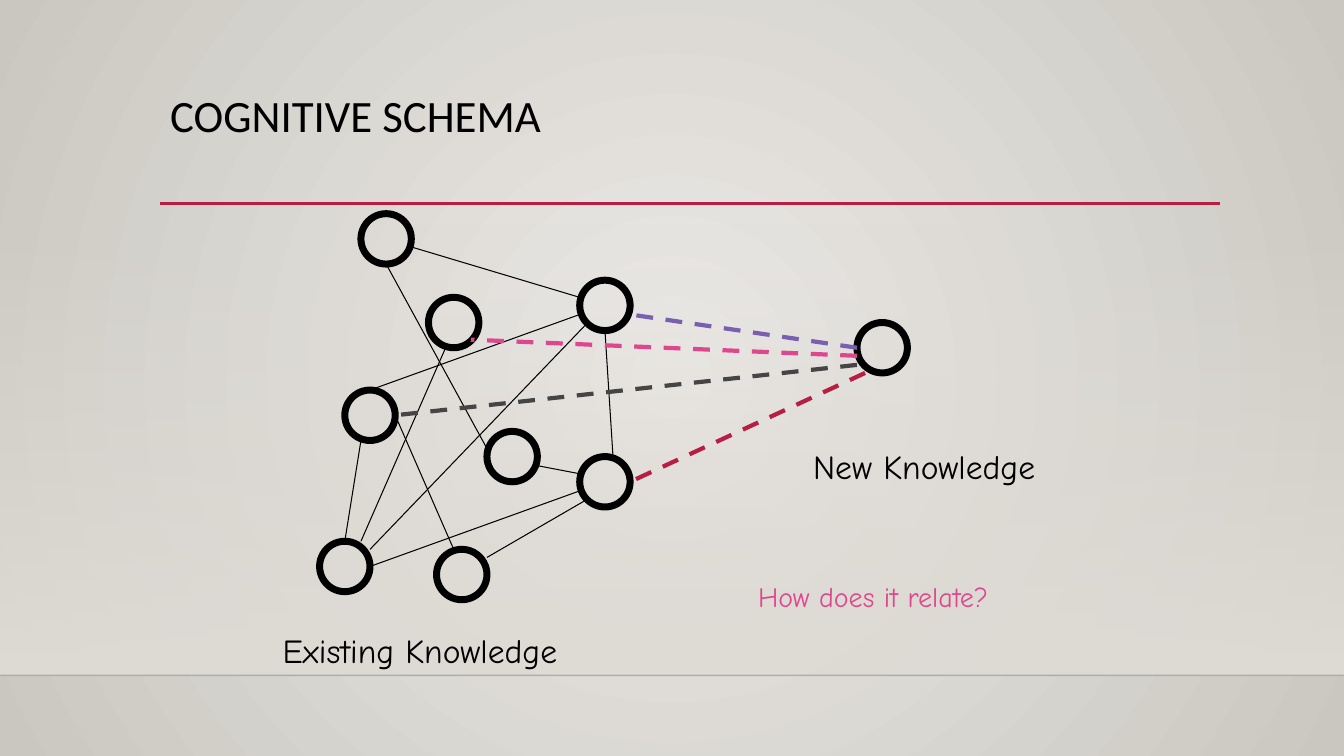
from typing import NamedTuple

from lxml import etree
from pptx import Presentation
from pptx.dml.color import RGBColor
from pptx.enum.dml import MSO_LINE
from pptx.enum.shapes import MSO_CONNECTOR, MSO_SHAPE
from pptx.enum.text import MSO_ANCHOR, PP_ALIGN
from pptx.oxml.ns import qn
from pptx.util import Inches, Pt

BLACK = RGBColor(0x00, 0x00, 0x00)
CRIMSON = RGBColor(0xB7, 0x1E, 0x42)
PINK = RGBColor(0xDE, 0x47, 0x8E)
PURPLE = RGBColor(0x79, 0x5F, 0xAF)
GREY = RGBColor(0x45, 0x45, 0x45)
FLOOR = RGBColor(0xDF, 0xDB, 0xD5)
GLOW = RGBColor(0xEC, 0xEA, 0xE7)
EDGE = RGBColor(0xCA, 0xC7, 0xC1)

LEFT, CENTER = PP_ALIGN.LEFT, PP_ALIGN.CENTER
SOLID, DASH = MSO_LINE.SOLID, MSO_LINE.DASH
STRAIGHT = MSO_CONNECTOR.STRAIGHT
TOP = MSO_ANCHOR.TOP
RECTANGLE, OVAL = MSO_SHAPE.RECTANGLE, MSO_SHAPE.OVAL

PAGE_WIDTH, PAGE_HEIGHT = 13.33, 7.5
NODE_SIZE = 0.5


class Link(NamedTuple):
    x1: float
    y1: float
    x2: float
    y2: float
    color: RGBColor = BLACK
    width: float = 0.75
    dash: MSO_LINE = SOLID


class Label(NamedTuple):
    text: str
    left: float
    top: float
    width: float
    height: float
    size: int
    font: str = "Comic Neue"
    color: RGBColor = BLACK
    align: PP_ALIGN = CENTER
    line_spacing: float = 1.0


FLOOR_LINE = Link(0, 6.7, PAGE_WIDTH, 6.7, BLACK, 1)
TITLE_RULE = Link(1.59, 2.02, 12.1, 2.02, CRIMSON, 2.5)

EXISTING_NODES = [
    (4.25, 2.95), (3.58, 2.12), (4.83, 4.28), (5.75, 2.78),
    (3.17, 5.37), (3.42, 3.87), (5.75, 4.53), (4.33, 5.45),
]
NEW_NODE = (8.5, 3.2)

EXISTING_LINKS = [
    Link(4.08, 2.45, 5.75, 2.95),
    Link(5.83, 3.2, 3.67, 5.45),
    Link(3.67, 3.87, 5.75, 3.12),
    Link(4.42, 3.45, 3.58, 5.37),
    Link(3.92, 4.12, 4.5, 5.45),
    Link(3.58, 4.37, 3.42, 5.37),
    Link(4.83, 5.53, 5.83, 4.95),
    Link(5.75, 4.7, 5.33, 4.62),
    Link(3.67, 5.62, 5.75, 4.87),
    Link(4.83, 4.45, 3.83, 2.62),
    Link(6.08, 4.53, 6, 3.28),
]
NEW_LINKS = [
    Link(8.5, 3.45, 6.25, 3.12, PURPLE, 3, DASH),
    Link(8.5, 3.53, 4.67, 3.37, PINK, 3, DASH),
    Link(8.5, 3.62, 3.92, 4.12, GREY, 3, DASH),
    Link(8.58, 3.7, 6.25, 4.78, CRIMSON, 3, DASH),
]

LABELS = [
    Label("COGNITIVE SCHEMA", 1.59, 0.88, 10.5, 1.15, 32, "Calibri",
          align=LEFT, line_spacing=0.9),
    Label("Existing Knowledge", 2.5, 6.2, 3.33, 0.5, 24),
    Label("New Knowledge", 7.5, 4.37, 3.33, 0.5, 24),
    Label("How does it relate?", 7.42, 5.7, 3.17, 0.44, 20,
          color=PINK, align=LEFT),
]


def set_opacity(element, percent: int) -> None:
    """Make the first RGB colour inside the element partly transparent."""
    color = next(element.iter(qn("a:srgbClr")))
    etree.SubElement(color, qn("a:alpha")).set("val", str(percent * 1000))


def set_gradient(fill, start: RGBColor, end: RGBColor) -> None:
    fill.gradient()
    for stop, color in zip(fill.gradient_stops, (start, end)):
        stop.color.rgb = color


def paint_background(page) -> None:
    """Fill the page with a glow that spreads in circles from its centre."""
    set_gradient(page.background.fill, GLOW, EDGE)
    linear = next(page.element.iter(qn("a:lin")))
    circle = etree.Element(qn("a:path"), {"path": "circle"})
    sides = dict.fromkeys("ltrb", "50000")
    etree.SubElement(circle, qn("a:fillToRect"), sides)
    linear.getparent().replace(linear, circle)


def add_floor(page) -> None:
    floor = page.shapes.add_shape(
        RECTANGLE, 0, Inches(2.21), Inches(PAGE_WIDTH), Inches(4.49))
    floor.shadow.inherit = False
    floor.line.fill.background()
    set_gradient(floor.fill, FLOOR, FLOOR)
    floor.fill.gradient_angle = 270
    set_opacity(floor.element.spPr, 0)


def add_link(page, link: Link):
    ends = [Inches(value) for value in link[:4]]
    connector = page.shapes.add_connector(STRAIGHT, *ends)
    connector.line.color.rgb = link.color
    connector.line.width = Pt(link.width)
    connector.line.dash_style = link.dash
    etree.SubElement(connector.element.spPr, qn("a:effectLst"))
    return connector


def add_node(page, left: float, top: float) -> None:
    node = page.shapes.add_shape(
        OVAL, Inches(left), Inches(top), Inches(NODE_SIZE), Inches(NODE_SIZE))
    node.shadow.inherit = False
    node.fill.background()
    node.line.color.rgb = BLACK
    node.line.width = Pt(5)


def add_label(page, label: Label) -> None:
    place = [Inches(value) for value in label[1:5]]
    frame = page.shapes.add_textbox(*place).text_frame
    frame.word_wrap = True
    frame.vertical_anchor = TOP
    para = frame.paragraphs[0]
    para.alignment = label.align
    para.line_spacing = label.line_spacing
    span = para.add_run()
    span.text = label.text
    span.font.color.rgb = label.color
    formats = {"name": label.font, "size": Pt(label.size)}
    for name, value in formats.items():
        setattr(span.font, name, value)


def main() -> None:
    deck = Presentation()
    deck.slide_width = Inches(PAGE_WIDTH)
    deck.slide_height = Inches(PAGE_HEIGHT)
    page = deck.slides.add_slide(deck.slide_layouts[6])

    paint_background(page)
    add_floor(page)
    floor_line = add_link(page, FLOOR_LINE)
    set_opacity(floor_line.element.spPr, 20)
    add_link(page, TITLE_RULE)

    for left, top in [*EXISTING_NODES, NEW_NODE]:
        add_node(page, left, top)
    for link in EXISTING_LINKS + NEW_LINKS:
        add_link(page, link)
    for label in LABELS:
        add_label(page, label)

    deck.save("out.pptx")


if __name__ == "__main__":
    main()
